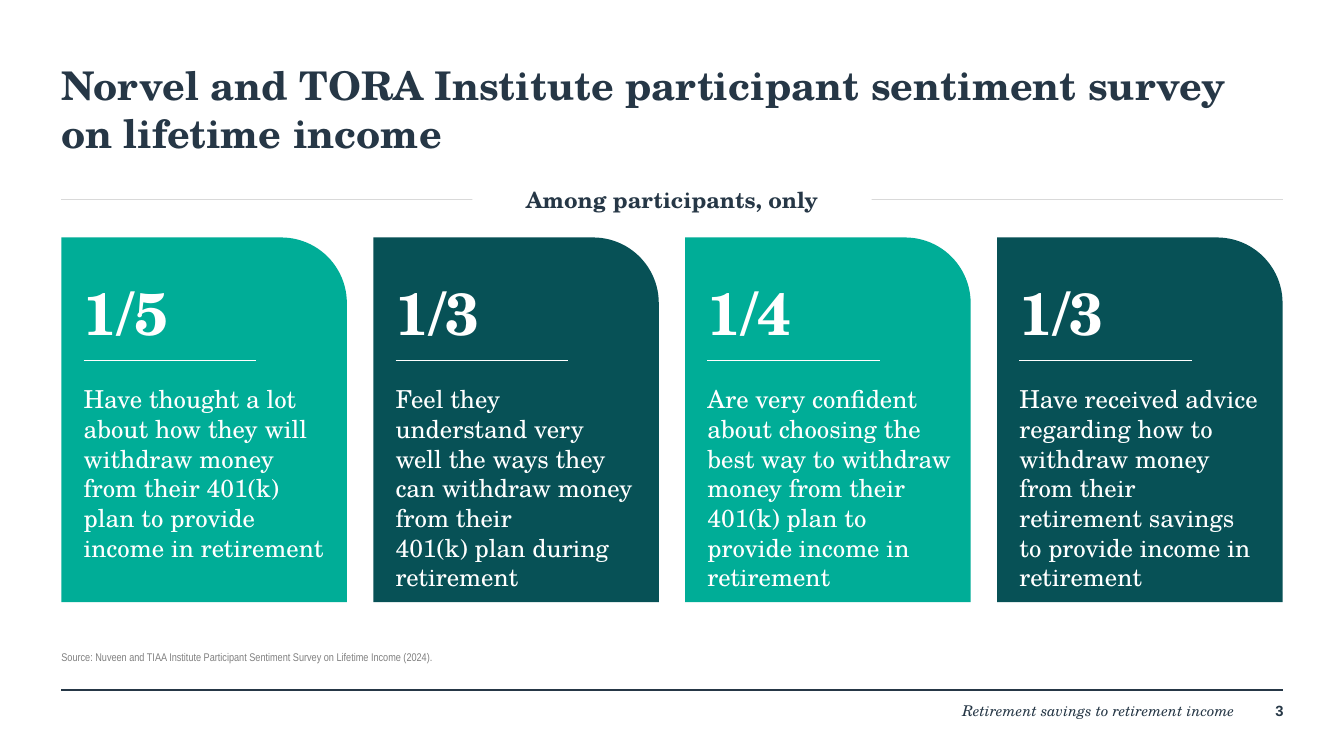
from dataclasses import dataclass

from lxml import etree
from pptx import Presentation
from pptx import util as u
from pptx.dml.color import RGBColor
from pptx.enum import shapes, text
from pptx.oxml import ns
from pptx.slide import Slide

SERIF = "TeX Gyre Schola"
NAVY, TEAL, PINE, WHITE = "263746", "00AD97", "075156", "FFFFFF"
RULE_GREY, SOURCE_GREY = "D9D9D9", "808080"
LEFT, RIGHT = 0.69, 14.42
CARD_TOP, CARD_WIDTH, CARD_HEIGHT, CARD_INSET = 2.67, 3.21, 4.1, 0.25


@dataclass(frozen=True)
class Style:
    size: float
    color: str = NAVY
    font: str = SERIF
    bold: bool = False
    italic: bool = False
    align: text.PP_ALIGN = text.PP_ALIGN.LEFT
    anchor: text.MSO_ANCHOR = text.MSO_ANCHOR.TOP


@dataclass(frozen=True)
class Card:
    share: str
    finding: str
    fill: str
    finding_width: float = 2.7


TITLE = Style(32, bold=True)
SUBTITLE = Style(18, bold=True, align=text.PP_ALIGN.CENTER)
SHARE = Style(48, WHITE, bold=True)
FINDING = Style(20, WHITE)
SOURCE = Style(9, SOURCE_GREY, "Arial Narrow", anchor=text.MSO_ANCHOR.BOTTOM)
FOOTER = Style(12, italic=True, align=text.PP_ALIGN.RIGHT)
PAGE = Style(12, font="Arial", bold=True, align=text.PP_ALIGN.RIGHT)

CARDS = [
    Card("1/5", "Have thought a lot about how they will withdraw money from "
         "their 401(k) plan to provide income in retirement", TEAL),
    Card("1/3", "Feel they understand very well the ways they can withdraw "
         "money from their\n401(k) plan during retirement", PINE),
    Card("1/4", "Are very confident about choosing the best way to withdraw "
         "money from their\n401(k) plan to provide income in retirement",
         TEAL, 2.75),
    Card("1/3", "Have received advice regarding how to withdraw money from "
         "their retirement savings to provide income in retirement", PINE),
]


def rgb(color: str) -> RGBColor:
    return RGBColor.from_string(color)


def add_text(slide: Slide, words: str, style: Style, left: float, top: float,
             width: float, height: float, fill: str = "") -> None:
    box = slide.shapes.add_textbox(
        u.Inches(left), u.Inches(top), u.Inches(width), u.Inches(height))
    if fill:
        box.fill.solid()
        box.fill.fore_color.rgb = rgb(fill)
    frame = box.text_frame
    frame.word_wrap = True
    frame.vertical_anchor = style.anchor
    frame.margin_left = frame.margin_right = 0
    frame.margin_top = frame.margin_bottom = 0
    paragraph = frame.paragraphs[0]
    paragraph.alignment = style.align
    for index, line in enumerate(words.split("\n")):
        if index:
            paragraph.add_line_break()
        run = paragraph.add_run()
        run.text = line
        run.font.name = style.font
        run.font.size = u.Pt(style.size)
        run.font.bold = style.bold
        run.font.italic = style.italic
        run.font.color.rgb = rgb(style.color)


def add_rule(slide: Slide, left: float, right: float, y: float,
             color: str, weight: float) -> None:
    """Draw a horizontal line without a shadow."""
    rule = slide.shapes.add_connector(
        shapes.MSO_CONNECTOR.STRAIGHT,
        u.Inches(left), u.Inches(y), u.Inches(right), u.Inches(y))
    rule.line.color.rgb = rgb(color)
    rule.line.width = u.Pt(weight)
    etree.SubElement(rule._element.spPr, ns.qn("a:effectLst"))


def add_card(slide: Slide, card: Card, left: float) -> None:
    panel = slide.shapes.add_shape(
        shapes.MSO_SHAPE.ROUND_1_RECTANGLE, u.Inches(left),
        u.Inches(CARD_TOP), u.Inches(CARD_WIDTH), u.Inches(CARD_HEIGHT))
    panel.adjustments[0] = 0.23
    panel.shadow.inherit = False
    panel.fill.solid()
    panel.fill.fore_color.rgb = rgb(card.fill)
    panel.line.fill.background()
    inner = left + CARD_INSET
    add_text(slide, card.share, SHARE, inner, 3.11, 2.32, 0.81)
    add_text(slide, card.finding, FINDING, inner, 4.32, card.finding_width, 2.02)
    add_rule(slide, inner, inner + 1.94, 4.05, WHITE, 1)


def main() -> None:
    deck = Presentation()
    deck.slide_width, deck.slide_height = u.Inches(15.11), u.Inches(8.5)
    slide = deck.slides.add_slide(deck.slide_layouts[6])
    content_width = RIGHT - LEFT

    add_text(slide, "Norvel and TORA Institute participant sentiment survey "
             "on lifetime income", TITLE, LEFT, 0.69, content_width, 1.13)
    add_rule(slide, LEFT, RIGHT, 2.24, RULE_GREY, 1)
    add_text(slide, "Among participants, only", SUBTITLE,
             5.31, 2.09, 4.49, 0.3, fill=WHITE)

    pitch = (content_width - CARD_WIDTH) / (len(CARDS) - 1)
    for index, card in enumerate(CARDS):
        add_card(slide, card, LEFT + index * pitch)

    add_text(slide, "Source: Nuveen and TIAA Institute Participant Sentiment "
             "Survey on Lifetime Income (2024).", SOURCE,
             LEFT, 7.05, 6.62, 0.41)
    add_rule(slide, LEFT, RIGHT, 7.76, NAVY, 2)
    add_text(slide, "Retirement savings to retirement income", FOOTER,
             5.32, 7.89, 8.56, 0.4)
    add_text(slide, "3", PAGE, 14.03, 7.89, 0.4, 0.33)
    deck.save("out.pptx")


if __name__ == "__main__":
    main()
